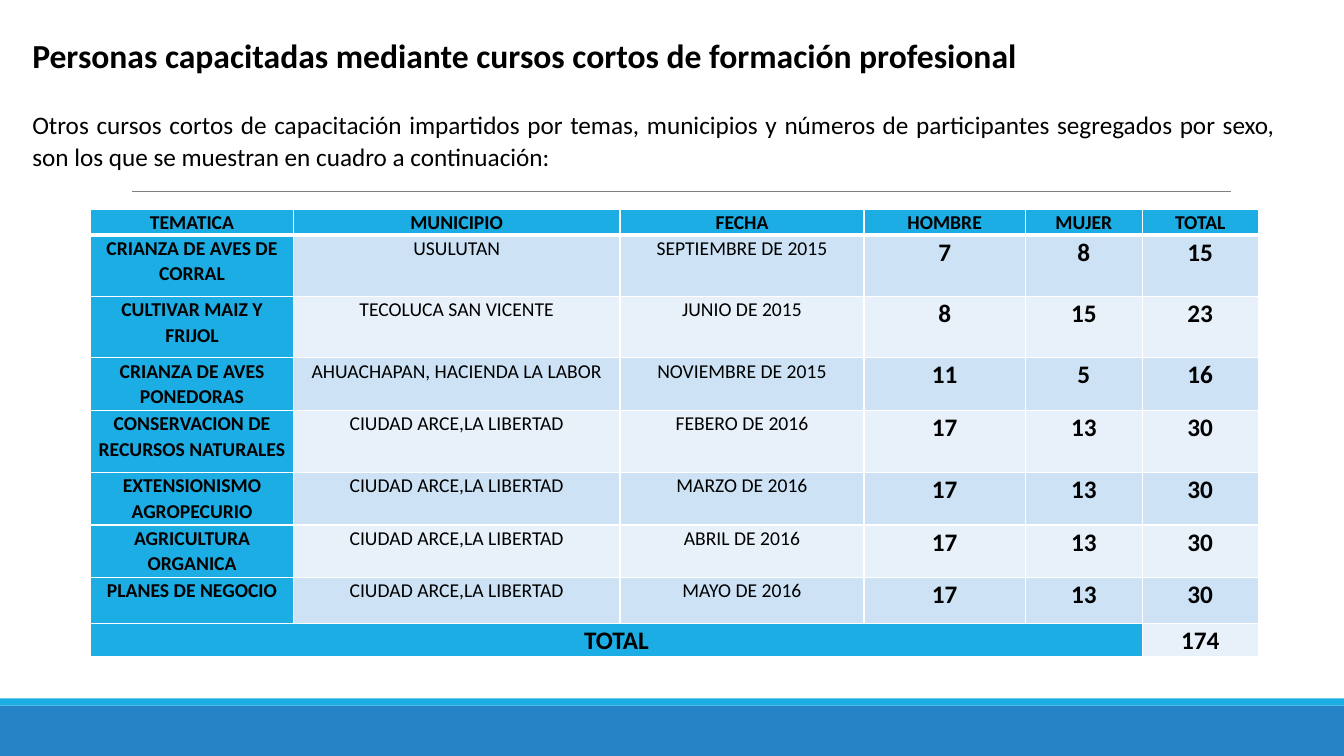
"""Build the slide on people trained through short vocational courses."""
import dataclasses

import lxml.etree
import pptx
import pptx.dml.color
import pptx.enum.shapes
import pptx.enum.text
import pptx.oxml.ns
import pptx.util

Inches = pptx.util.Inches
Pt = pptx.util.Pt
ALIGN = pptx.enum.text.PP_ALIGN
qn = pptx.oxml.ns.qn


@dataclasses.dataclass(frozen=True)
class Theme:
    font: str = "Calibri"
    text: str = "000000"
    accent: str = "1CADE4"
    footer: str = "2683C6"
    rule: str = "808080"
    border: str = "FFFFFF"
    bands: tuple = ("CDE3F5", "E8F1FA")
    title_size: int = 24
    body_size: int = 18
    label_size: int = 14
    line_spacing: float = 1.07


class SlideBuilder:
    def __init__(self, slide, theme):
        self.slide = slide
        self.theme = theme

    def color(self, value):
        return pptx.dml.color.RGBColor.from_string(value)

    def add_text(self, tf, text, size, bold=False, align=ALIGN.LEFT, spacing=1.0, after=0):
        p = tf.paragraphs[0]
        p.alignment = align
        p.line_spacing = spacing
        p.space_before = Pt(0)
        p.space_after = Pt(after)
        r = p.add_run()
        r.text = text
        r.font.name = self.theme.font
        r.font.size = Pt(size)
        r.font.bold = bold
        r.font.color.rgb = self.color(self.theme.text)
        return p

    def place(self, sp, left, top, width, height, wrap):
        sp.left, sp.top = Inches(left), Inches(top)
        sp.width, sp.height = Inches(width), Inches(height)
        tf = sp.text_frame
        tf.word_wrap = wrap
        tf.auto_size = pptx.enum.text.MSO_AUTO_SIZE.SHAPE_TO_FIT_TEXT
        tf.vertical_anchor = pptx.enum.text.MSO_ANCHOR.TOP
        return tf

    def title(self, text, *box):
        tf = self.place(self.slide.shapes.title, *box, wrap=False)
        self.add_text(tf, text, self.theme.title_size, bold=True)

    def body(self, text, *box):
        tf = self.place(self.slide.placeholders[1], *box, wrap=True)
        p = self.add_text(tf, text, self.theme.body_size, align=ALIGN.JUSTIFY,
                          spacing=self.theme.line_spacing, after=8)
        pPr = p._p.get_or_add_pPr()
        pPr.set("marL", "0")
        pPr.set("indent", "0")
        lxml.etree.SubElement(pPr, qn("a:buNone"))

    def bar(self, left, top, width, height, fill):
        sp = self.slide.shapes.add_shape(
            pptx.enum.shapes.MSO_SHAPE.RECTANGLE,
            Inches(left), Inches(top), Inches(width), Inches(height))
        sp.shadow.inherit = False
        sp.fill.solid()
        sp.fill.fore_color.rgb = self.color(fill)
        sp.line.fill.background()

    def rule(self, left, right, y):
        line = self.slide.shapes.add_connector(
            pptx.enum.shapes.MSO_CONNECTOR.STRAIGHT,
            Inches(left), Inches(y), Inches(right), Inches(y))
        line.line.color.rgb = self.color(self.theme.rule)
        line.line.width = Pt(0.5)
        lxml.etree.SubElement(line._element.spPr, qn("a:effectLst"))

    def table(self, left, top, widths, heights):
        table = self.slide.shapes.add_table(
            len(heights), len(widths), Inches(left), Inches(top),
            Inches(sum(widths)), Inches(sum(heights))).table
        table.horz_banding = False
        for column, width in zip(table.columns, widths):
            column.width = Inches(width)
        for row, height in zip(table.rows, heights):
            row.height = Inches(height)
        return table

    def cell(self, cell, text, fill, size, bold, bottom=1):
        cell.margin_left = cell.margin_right = Inches(0.07)
        cell.margin_top = cell.margin_bottom = 0
        tcPr = cell._tc.get_or_add_tcPr()
        for side, width in (("L", 1), ("R", 1), ("T", 1), ("B", bottom)):
            ln = lxml.etree.SubElement(tcPr, qn(f"a:ln{side}"), w=str(Pt(width)))
            solid = lxml.etree.SubElement(ln, qn("a:solidFill"))
            lxml.etree.SubElement(solid, qn("a:srgbClr"), val=self.theme.border)
        cell.fill.solid()
        cell.fill.fore_color.rgb = self.color(fill)
        self.add_text(cell.text_frame, text, size, bold, ALIGN.CENTER, self.theme.line_spacing)


HEADERS = ("TEMATICA", "MUNICIPIO", "FECHA", "HOMBRE", "MUJER", "TOTAL")
COURSES = (
    ("CRIANZA DE AVES DE CORRAL", "USULUTAN", "SEPTIEMBRE DE 2015", 7, 8),
    ("CULTIVAR MAIZ Y FRIJOL", "TECOLUCA SAN VICENTE", "JUNIO DE 2015", 8, 15),
    ("CRIANZA DE AVES PONEDORAS", "AHUACHAPAN, HACIENDA LA LABOR", "NOVIEMBRE DE 2015", 11, 5),
    ("CONSERVACION DE RECURSOS NATURALES", "CIUDAD ARCE,LA LIBERTAD", "FEBERO DE 2016", 17, 13),
    ("EXTENSIONISMO AGROPECURIO", "CIUDAD ARCE,LA LIBERTAD", "MARZO DE 2016", 17, 13),
    ("AGRICULTURA ORGANICA", "CIUDAD ARCE,LA LIBERTAD", "ABRIL DE 2016", 17, 13),
    ("PLANES DE NEGOCIO", "CIUDAD ARCE,LA LIBERTAD", "MAYO DE 2016", 17, 13),
)
COLUMN_WIDTHS = (2.01, 3.24, 2.42, 1.6, 1.16, 1.15)
ROW_HEIGHTS = (0.25, 0.61, 0.61, 0.52, 0.62, 0.52, 0.52, 0.46, 0.31)


def add_courses(builder):
    theme = builder.theme
    table = builder.table(0.9, 2.08, COLUMN_WIDTHS, ROW_HEIGHTS)
    for col, header in enumerate(HEADERS):
        builder.cell(table.cell(0, col), header, theme.accent, theme.label_size, True, bottom=3)
    for row, (topic, town, date, men, women) in enumerate(COURSES, start=1):
        band = theme.bands[(row - 1) % 2]
        builder.cell(table.cell(row, 0), topic, theme.accent, theme.label_size, True)
        for col, text in enumerate((town, date), start=1):
            builder.cell(table.cell(row, col), text, band, theme.label_size, False)
        for col, count in enumerate((men, women, men + women), start=3):
            builder.cell(table.cell(row, col), str(count), band, theme.body_size, True)
    last = len(COURSES) + 1
    table.cell(last, 0).merge(table.cell(last, 4))
    builder.cell(table.cell(last, 0), "TOTAL", theme.accent, theme.body_size, True)
    total = sum(men + women for *_, men, women in COURSES)
    builder.cell(table.cell(last, 5), str(total), theme.bands[1], theme.body_size, True)


def main():
    prs = pptx.Presentation()
    prs.slide_width, prs.slide_height = Inches(13.33), Inches(7.5)
    theme = Theme()
    builder = SlideBuilder(prs.slides.add_slide(prs.slide_layouts[1]), theme)
    builder.bar(0, 7, 13.33, 0.5, theme.footer)
    builder.bar(0, 6.93, 13.33, 0.07, theme.accent)
    builder.rule(1.31, 12.21, 1.9)
    builder.title("Personas capacitadas mediante cursos cortos de formación profesional",
                  0.22, 0.3, 10.06, 0.5)
    builder.body("Otros cursos cortos de capacitación impartidos por temas, municipios y números "
                 "de participantes segregados por sexo, son los que se muestran en cuadro a "
                 "continuación:", 0.22, 1.01, 12.53, 0.75)
    add_courses(builder)
    prs.save("out.pptx")


if __name__ == "__main__":
    main()
